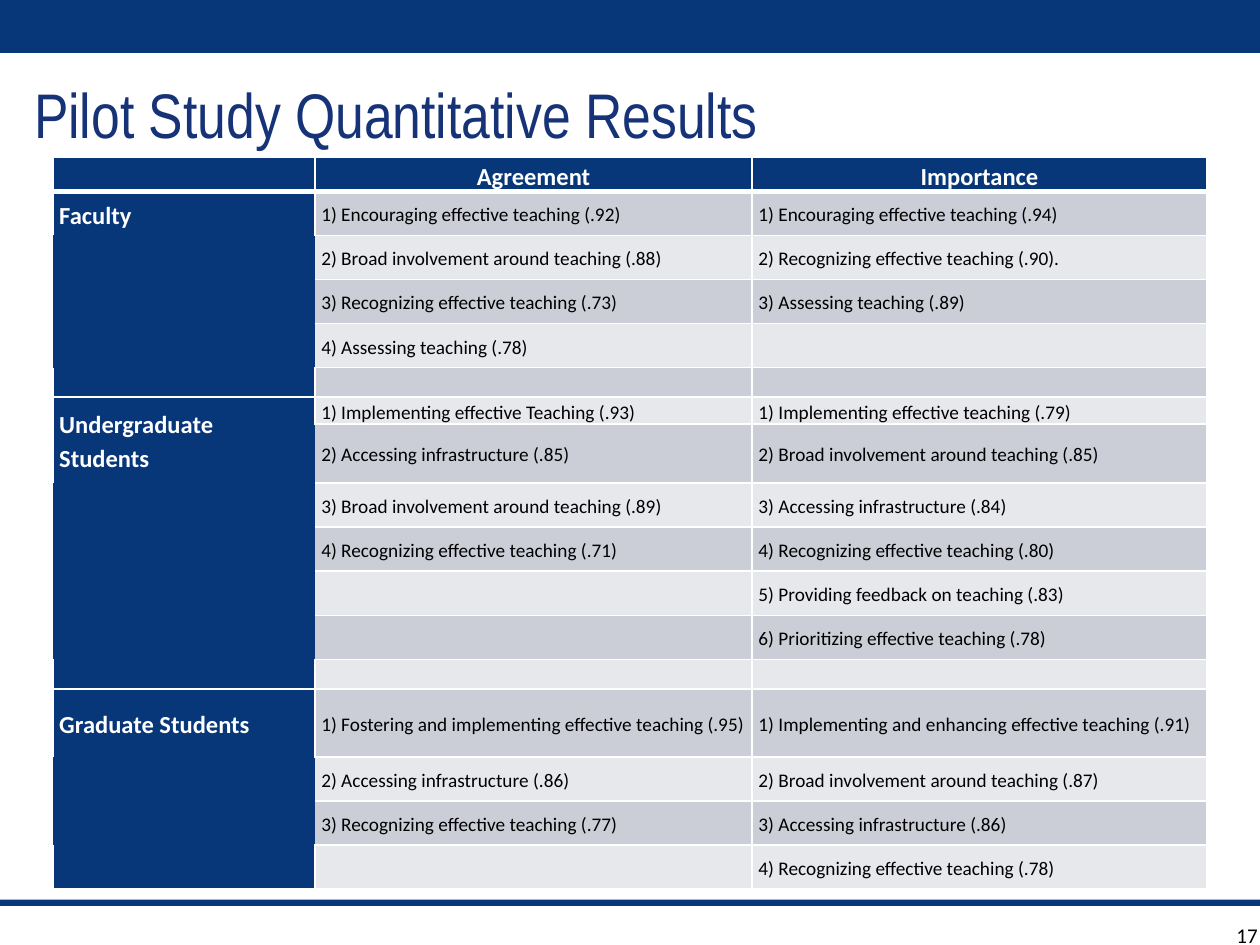
from lxml import etree
from pptx import Presentation, util as u
from pptx.dml.color import RGBColor
from pptx.enum import shapes, text
from pptx.oxml.ns import qn

NAVY = RGBColor(0x07, 0x37, 0x79)
TITLE_BLUE = RGBColor(0x17, 0x33, 0x77)
WHITE = RGBColor(255, 255, 255)
BLACK = RGBColor(0, 0, 0)
BANDS = RGBColor(0xE7, 0xE8, 0xEC), RGBColor(0xCC, 0xCE, 0xD7)

TITLE = "Pilot Study Quantitative Results"
PAGE = "17"
HEADINGS = ["", "Agreement", "Importance"]
# Each group: label, rows the label covers, then (row height, agreement, importance)
GROUPS = [
    ("Faculty", 1, [
        (0.35, "1) Encouraging effective teaching (.92)", "1) Encouraging effective teaching (.94)"),
        (0.35, "2) Broad involvement around teaching (.88)", "2) Recognizing effective teaching (.90)."),
        (0.35, "3) Recognizing effective teaching (.73)", "3) Assessing teaching (.89)"),
        (0.35, "4) Assessing teaching (.78)", ""),
        (0.18, "", ""),
    ]),
    ("Undergraduate\nStudents", 2, [
        (0.18, "1) Implementing effective Teaching (.93)", "1) Implementing effective teaching (.79)"),
        (0.47, "2) Accessing infrastructure (.85)", "2) Broad involvement around teaching (.85)"),
        (0.35, "3) Broad involvement around teaching (.89)", "3) Accessing infrastructure (.84)"),
        (0.35, "4) Recognizing effective teaching (.71)", "4) Recognizing effective teaching (.80)"),
        (0.35, "", "5) Providing feedback on teaching (.83)"),
        (0.35, "", "6) Prioritizing effective teaching (.78)"),
        (0.18, "", ""),
    ]),
    ("Graduate Students", 1, [
        (0.54, "1) Fostering and implementing effective teaching (.95)",
         "1) Implementing and enhancing effective teaching (.91)"),
        (0.35, "2) Accessing infrastructure (.86)", "2) Broad involvement around teaching (.87)"),
        (0.35, "3) Recognizing effective teaching (.77)", "3) Accessing infrastructure (.86)"),
        (0.35, "", "4) Recognizing effective teaching (.78)"),
    ]),
]
COLUMN_WIDTHS = [2.08, 3.47, 3.61]
HEADER_HEIGHT = 0.18


def box(*inches):
    return [u.Inches(value) for value in inches]


def style(paragraph, size, color, bold=False, font="Calibri"):
    for run in paragraph.runs:
        run.font.name, run.font.size, run.font.bold = font, u.Pt(size), bold
        run.font.color.rgb = color


def set_borders(cell, widths):
    """widths maps sides (L, R, T, B) to points; other sides get no line."""
    properties = cell._tc.get_or_add_tcPr()
    for side in "LRTB":
        width = widths.get(side, 0)
        line = etree.SubElement(properties, qn("a:ln" + side), w=str(u.Pt(width or 1)))
        if width:
            fill = etree.SubElement(line, qn("a:solidFill"))
            etree.SubElement(fill, qn("a:srgbClr"), val=str(WHITE))
        else:
            etree.SubElement(line, qn("a:noFill"))


def fill_cell(cell, words, fill, size, color, bold, borders, align=text.PP_ALIGN.LEFT):
    set_borders(cell, borders)
    cell.fill.solid()
    cell.fill.fore_color.rgb = fill
    cell.margin_left = cell.margin_right = u.Inches(0.05)
    cell.margin_top = cell.margin_bottom = 0
    cell.vertical_anchor = text.MSO_ANCHOR.MIDDLE
    cell.text_frame.text = words
    for paragraph in cell.text_frame.paragraphs:
        paragraph.line_spacing = 1.15
        paragraph.alignment = align
        style(paragraph, size, color, bold)
        if not words:  # keeps blank rows as low as the text rows
            paragraph._p.get_or_add_endParaRPr().set("sz", str(size * 100))


prs = Presentation()
prs.slide_width, prs.slide_height = box(10, 7.5)
slide = prs.slides.add_slide(prs.slide_layouts[5])

# Bars at the head and foot
for top, height in [(0, 0.42), (7.14, 0.05)]:
    bar = slide.shapes.add_shape(shapes.MSO_SHAPE.RECTANGLE, *box(0, top, 10, height))
    bar.shadow.inherit = False
    bar.fill.solid()
    bar.fill.fore_color.rgb = NAVY
    bar.line.fill.background()

# Title
title = slide.shapes.title
title.left, title.top, title.width, title.height = box(0.17, 0.42, 10, 0.83)
title.text_frame.text = TITLE
title.text_frame.vertical_anchor = text.MSO_ANCHOR.BOTTOM
title.text_frame.paragraphs[0].alignment = text.PP_ALIGN.LEFT
style(title.text_frame.paragraphs[0], 36, TITLE_BLUE, font="Arial Narrow")

# Page number
page = slide.shapes.add_textbox(*box(9.25, 7.27, 0.83, 0.4)).text_frame
page.word_wrap = True
page.text = PAGE
page.paragraphs[0].alignment = text.PP_ALIGN.RIGHT
style(page.paragraphs[0], 12, BLACK)

# Results table
heights = [HEADER_HEIGHT] + [row[0] for _, _, rows in GROUPS for row in rows]
results = slide.shapes.add_table(len(heights), len(COLUMN_WIDTHS),
                                 *box(0.42, 1.25, sum(COLUMN_WIDTHS), sum(heights))).table
for column, width in zip(results.columns, COLUMN_WIDTHS):
    column.width = u.Inches(width)
for row, height in zip(results.rows, heights):
    row.height = u.Inches(height)

for c, heading in enumerate(HEADINGS):
    fill_cell(results.cell(0, c), heading, NAVY, 14, WHITE, True,
              dict(L=1, R=1, T=1, B=3), text.PP_ALIGN.CENTER)
    results.cell(0, c).vertical_anchor = text.MSO_ANCHOR.TOP

r = 1
for label, label_rows, rows in GROUPS:
    first, last = r, r + len(rows) - 1
    for _, *findings in rows:
        # The label column is outlined at the ends of its group and open between
        is_end = r in (first, last)
        outline = dict(L=1, R=1) if is_end else {}
        if is_end:
            outline["T" if r == first else "B"] = 1
        fill_cell(results.cell(r, 0), label if r == first else "",
                  NAVY, 14 if is_end else 11, WHITE, True, outline)
        for c, finding in enumerate(findings, 1):
            left = 1 if is_end or c > 1 else 0
            top = 3 if r == 1 else 1
            fill_cell(results.cell(r, c), finding, BANDS[r % 2], 11, BLACK, False,
                      dict(L=left, R=1, T=top, B=1))
        r += 1
    if label_rows > 1:
        results.cell(first, 0).merge(results.cell(first + label_rows - 1, 0))

prs.save("out.pptx")
